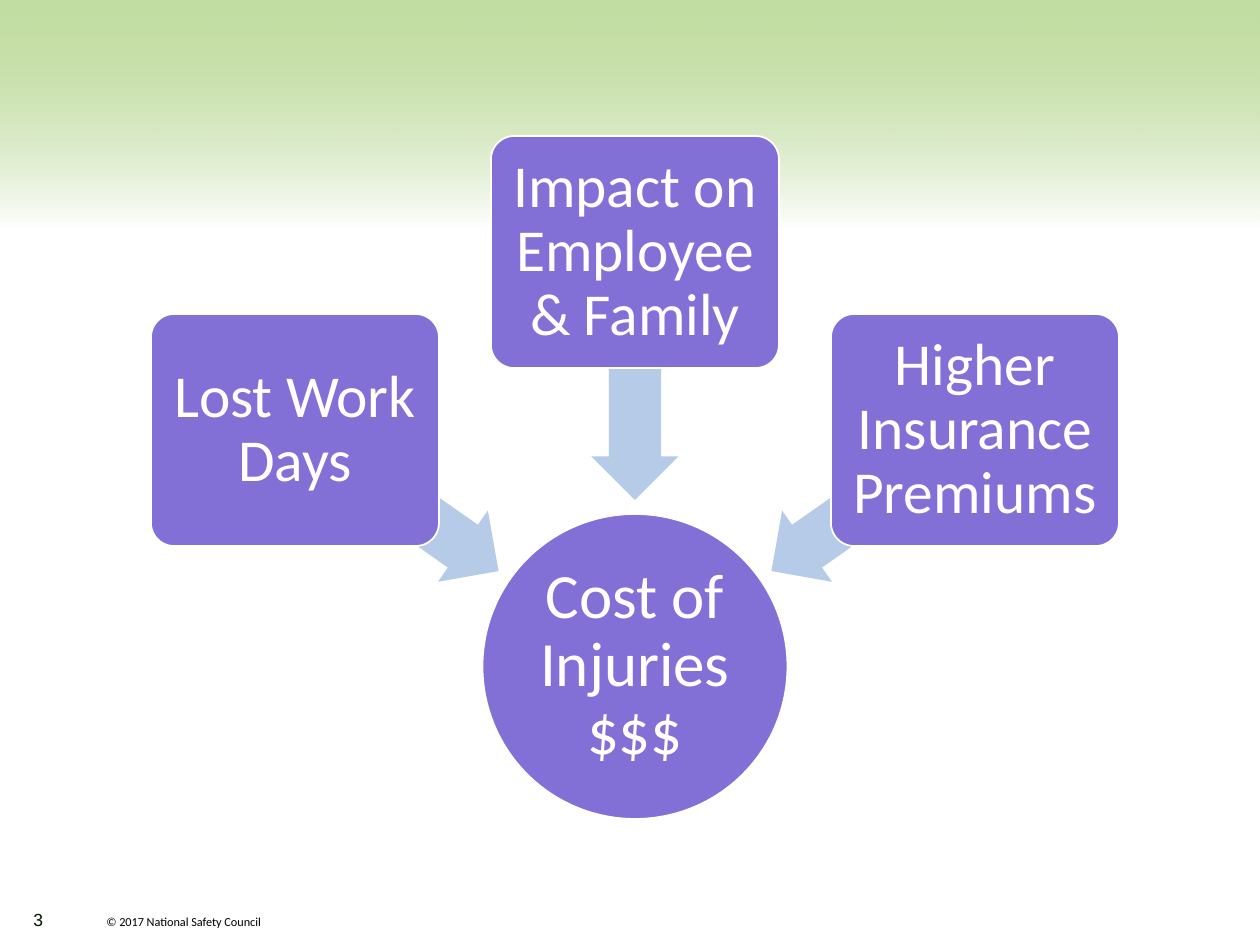
from dataclasses import dataclass

from lxml import etree
from pptx import Presentation
from pptx.dml.color import RGBColor
from pptx.enum.shapes import MSO_SHAPE
from pptx.enum.text import MSO_ANCHOR, PP_ALIGN
from pptx.oxml.ns import qn
from pptx.util import Emu, Pt

RECT, ROUND_RECT = MSO_SHAPE.RECTANGLE, MSO_SHAPE.ROUNDED_RECTANGLE
OVAL, LEFT_ARROW = MSO_SHAPE.OVAL, MSO_SHAPE.LEFT_ARROW
MIDDLE, CENTER = MSO_ANCHOR.MIDDLE, PP_ALIGN.CENTER

EMU_PER_PX = 914400 / 126
SLIDE_W, SLIDE_H = 1260, 945


@dataclass(frozen=True)
class Theme:
    node: RGBColor = RGBColor(0x83, 0x70, 0xD6)
    arrow: RGBColor = RGBColor(0xB5, 0xCB, 0xE7)
    white: RGBColor = RGBColor(0xFF, 0xFF, 0xFF)
    band: RGBColor = RGBColor(0x8C, 0xC0, 0x50)
    black: RGBColor = RGBColor(0, 0, 0)
    number: RGBColor = RGBColor(0x00, 0x14, 0x00)
    body_font: str = "Calibri"
    number_font: str = "Arial"
    hub_size: int = 36
    card_size: int = 34
    number_size: int = 10
    copyright_size: int = 7


THEME = Theme()


def px(value):
    return Emu(round(value * EMU_PER_PX))


def format_runs(frame, size, color, font=THEME.body_font):
    for paragraph in frame.paragraphs:
        for run in paragraph.runs:
            run.font.size = Pt(size)
            run.font.name = font
            run.font.color.rgb = color


def add_plain_shape(slide, kind, box):
    shape = slide.shapes.add_shape(kind, *map(px, box))
    shape.shadow.inherit = False
    shape.line.fill.background()
    return shape


def add_node(slide, kind, box, label, size, inset):
    """Purple node with a white outline and centred label."""
    node = add_plain_shape(slide, kind, box)
    node.fill.solid()
    node.fill.fore_color.rgb = THEME.node
    node.line.color.rgb = THEME.white
    node.line.width = Pt(1)
    frame = node.text_frame
    frame.margin_left = frame.margin_right = px(inset)
    frame.margin_top = frame.margin_bottom = px(inset)
    frame.word_wrap = True
    frame.vertical_anchor = MIDDLE
    frame.text = label
    frame.paragraphs[0].alignment = CENTER
    frame.paragraphs[0].line_spacing = 0.9
    format_runs(frame, size, THEME.white)
    return node


def add_arrow(slide, center_x, center_y, rotation):
    width, height = 248, 87
    box = (center_x - width / 2, center_y - height / 2, width, height)
    arrow = add_plain_shape(slide, LEFT_ARROW, box)
    arrow.adjustments[0], arrow.adjustments[1] = 0.6, 0.5
    arrow.rotation = rotation
    arrow.fill.solid()
    arrow.fill.fore_color.rgb = THEME.arrow


def add_header_band(slide, box):
    """Green band fading downwards to white."""
    band = add_plain_shape(slide, RECT, box)
    band.fill.gradient()
    band.fill.gradient_angle = 270
    start, end = band.fill.gradient_stops
    start.position, end.position = 0, 1
    start.color.rgb, end.color.rgb = THEME.band, THEME.white
    green = next(band.element.iter(qn("a:srgbClr")))
    etree.SubElement(green, qn("a:alpha")).set("val", "53000")


def add_cost_diagram(slide, box):
    """Three causes pointing at the central cost of injuries."""
    left, top, width, height = box
    middle = left + width / 2
    hub, card_w, card_h = 305, 288, 232
    card_step, arrow_step = (width - card_w) / 2, 238

    hub_box = (middle - hub / 2, top + height - hub, hub, hub)
    add_node(slide, OVAL, hub_box, "Cost of Injuries\v$$$", THEME.hub_size, 4)

    # label, column, card top, arrow centre, arrow rotation
    causes = [
        ("Lost Work Days", -1, 178, 364, 215),
        ("Impact on Employee & Family", 0, 0, 240, 270),
        ("Higher Insurance Premiums", 1, 178, 364, 325),
    ]
    for label, column, card_top, arrow_y, rotation in causes:
        add_arrow(slide, middle + column * arrow_step, top + arrow_y, rotation)
        card_left = middle + column * card_step - card_w / 2
        card = add_node(slide, ROUND_RECT, (card_left, top + card_top, card_w, card_h),
                        label, THEME.card_size, 9)
        card.adjustments[0] = 0.1


def add_footer(slide, box):
    """Slide number and copyright line."""
    left, top = box[:2]
    items = [
        ("© 2017 National Safety Council", (left + 73, top + 5, 399, 32),
         THEME.copyright_size, THEME.black, THEME.body_font),
        ("3", (left, top, 63, 55), THEME.number_size, THEME.number, THEME.number_font),
    ]
    for text, item_box, size, color, font in items:
        frame = slide.shapes.add_textbox(*map(px, item_box)).text_frame
        frame.word_wrap = True
        frame.text = text
        format_runs(frame, size, color, font)


def main():
    deck = Presentation()
    deck.slide_width, deck.slide_height = px(SLIDE_W), px(SLIDE_H)
    slide = deck.slides.add_slide(deck.slide_layouts[6])
    add_header_band(slide, (0, 0, SLIDE_W, 230))
    add_footer(slide, (21, 903, 472, 55))
    add_cost_diagram(slide, (151, 136, 968, 683))
    deck.save("out.pptx")


if __name__ == "__main__":
    main()
